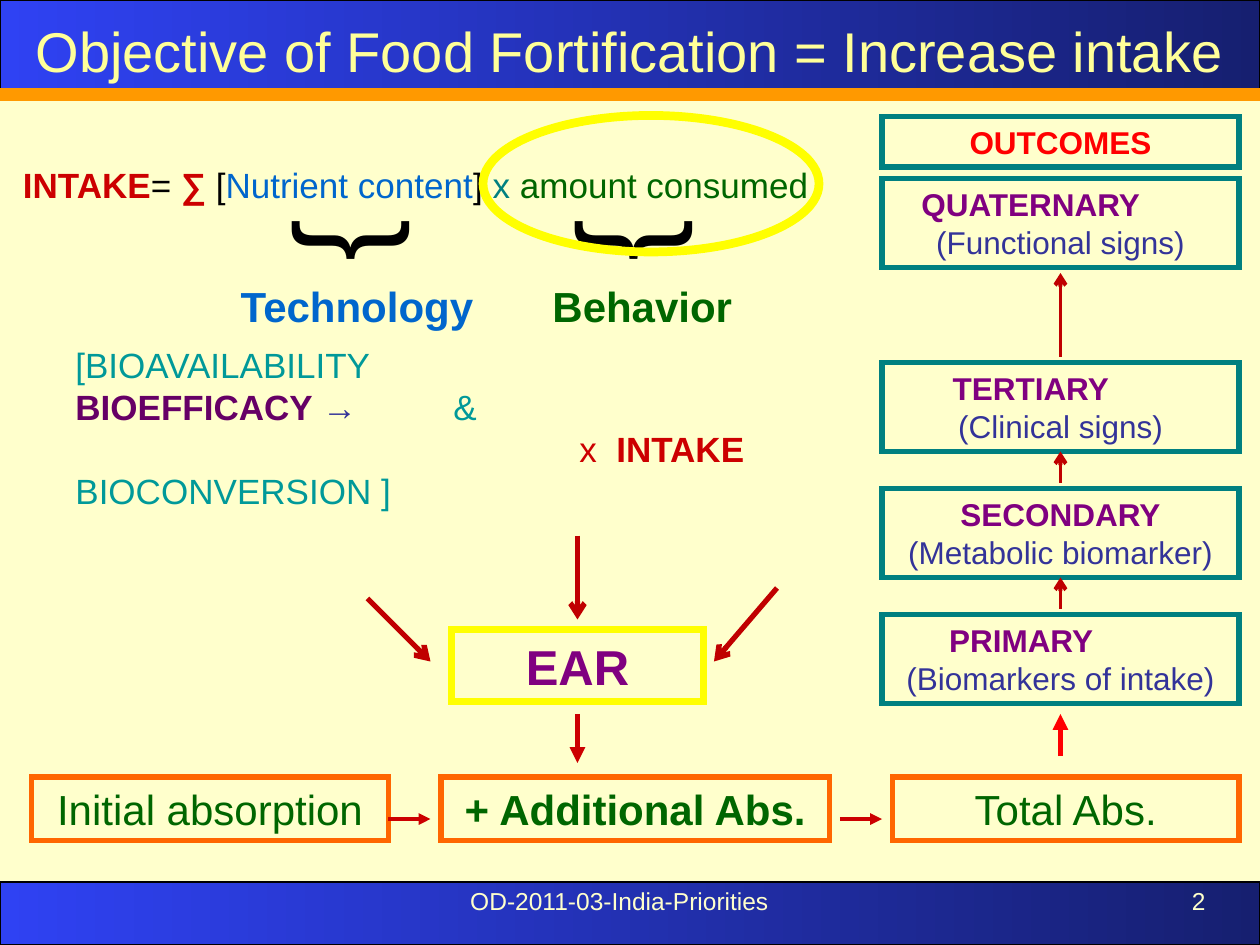
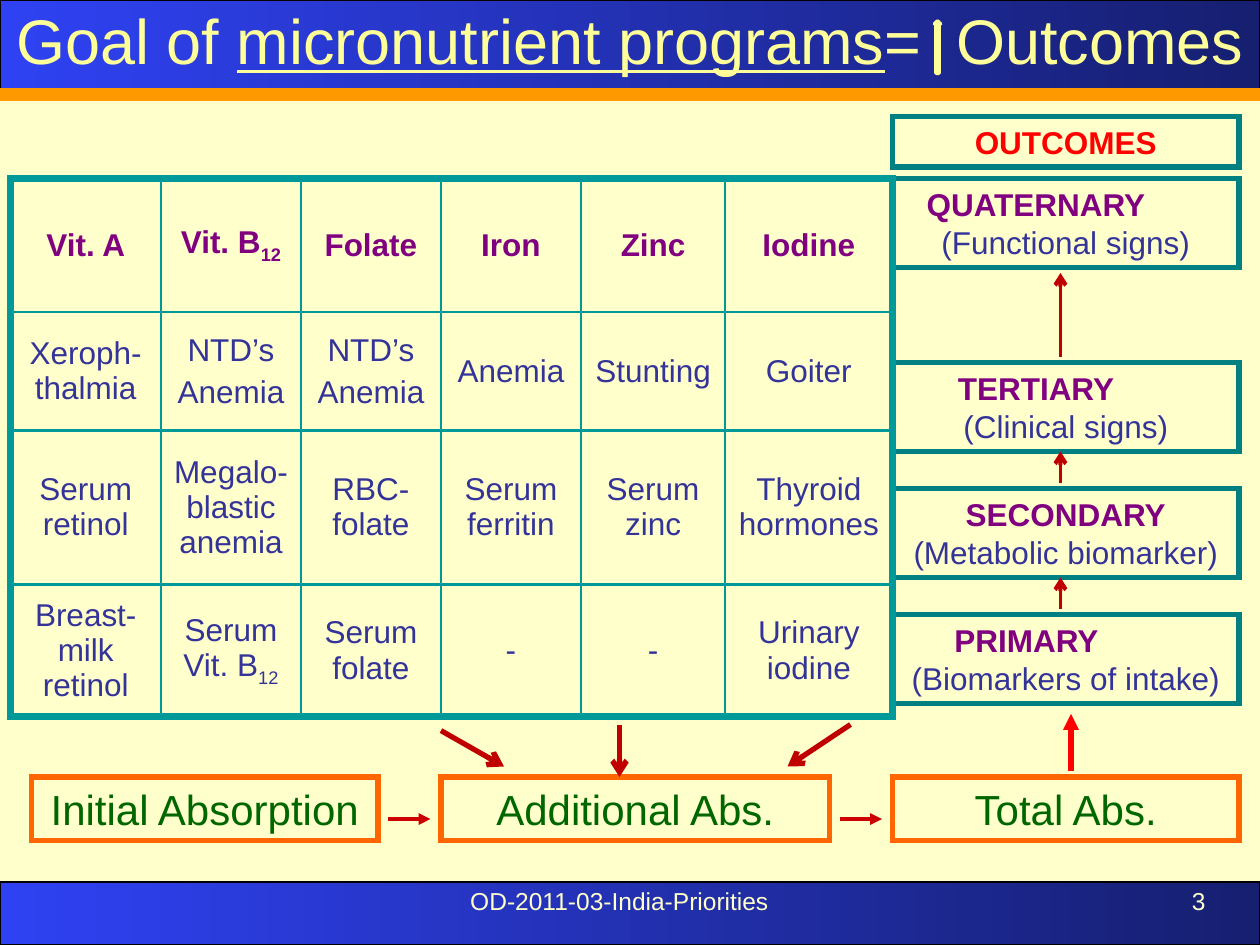
from lxml import etree
from pptx import Presentation
from pptx.dml.color import RGBColor
from pptx.enum.shapes import MSO_CONNECTOR, MSO_SHAPE
from pptx.enum.text import MSO_ANCHOR, MSO_AUTO_SIZE, PP_ALIGN
from pptx.oxml.ns import qn
from pptx.util import Pt

LEFT, CENTER, RIGHT = PP_ALIGN.LEFT, PP_ALIGN.CENTER, PP_ALIGN.RIGHT
TOP, MIDDLE = MSO_ANCHOR.TOP, MSO_ANCHOR.MIDDLE
RECT, OVAL, UP_ARROW = MSO_SHAPE.RECTANGLE, MSO_SHAPE.OVAL, MSO_SHAPE.UP_ARROW
STRAIGHT = MSO_CONNECTOR.STRAIGHT

FONT = "Arial"
W, H = 720, 540
CREAM, PALE_YELLOW, YELLOW, ORANGE = "FFFFCC", "FFFF99", "FFFF00", "FF9900"
BAND_START, BAND_END, BLACK = "2F42F3", "161F70", "000000"
RED, CRIMSON, DARK_RED, BOX_ORANGE = "FF0000", "CC0000", "C00000", "FF6600"
TEAL, LIGHT_TEAL, GREEN = "008080", "009999", "006600"
PURPLE, PLUM, INDIGO, BLUE = "800080", "660066", "333399", "0066CC"

FOOTER = "OD-2011-03-India-Priorities"

# name, sign, right margin that shifts the name left, box top
OUTCOMES = [
    ("QUATERNARY", "(Functional signs)", 34, 102),
    ("TERTIARY", "(Clinical signs)", 34, 207),
    ("SECONDARY", "(Metabolic biomarker)", 0, 279),
    ("PRIMARY", "(Biomarkers of intake)", 45, 351),
]
OUTCOME_ARROWS = [(204, 156), (276, 258), (348, 330)]

INTAKE_FORMULA = [
    ("INTAKE", dict(color=CRIMSON, bold=True)), "= ",
    ("∑", dict(color=CRIMSON, bold=True)), " [",
    ("Nutrient content", dict(color=BLUE)), "] ",
    ("x ", dict(color=TEAL)), ("amount consumed", dict(color=GREEN)),
]
BIO_LINES = [
    ["[BIOAVAILABILITY"],
    [("BIOEFFICACY ", dict(color=PLUM, bold=True)), ("→\t", dict(color=INDIGO)), "&"],
    ["BIOCONVERSION ]"],
]
# text, colour, left, width, left of its brace
FACTORS = [
    ("Technology", BLUE, 120, 168, 185),
    ("Behavior", GREEN, 240, 254, 347),
]
EAR_ARROWS = [(330, 306, 330, 354), (210, 342, 246, 378), (444, 336, 408, 378)]
ABSORPTION_ARROWS = [(252, 417.5, 288, 438), (486, 414, 450, 438), (354, 414, 354, 444)]

# "|" parts paragraphs, "_" starts a subscript
NUTRIENTS = [
    ["Vit. A", "Vit. B_12", "Folate", "Iron", "Zinc", "Iodine"],
    ["Xeroph-thalmia", "NTD’s|Anemia", "NTD’s|Anemia", "Anemia", "Stunting", "Goiter"],
    ["Serum retinol", "Megalo-blastic anemia", "RBC-folate", "Serum ferritin",
     "Serum zinc", "Thyroid hormones"],
    ["Breast-milk retinol", "Serum Vit. B_12", "Serum folate", "-", "-", "Urinary iodine"],
]
COL_WIDTHS = [86, 80, 80, 80, 82.5, 95.5]
ROW_HEIGHTS = [76.5, 67.5, 88, 75.5]


def rgb(value):
    return RGBColor.from_string(value)


def write(tf, paras, size=18, color=BLACK, bold=False, align=CENTER, anchor=MIDDLE,
          wrap=True, gaps=(), right=(), tab=None, inset=None):
    """Fill tf; a paragraph is a list of runs, each a string or (string, overrides)."""
    tf.word_wrap, tf.vertical_anchor = wrap, anchor
    tf.auto_size = MSO_AUTO_SIZE.NONE
    if inset is not None:
        tf.margin_left = tf.margin_right = Pt(inset)
    for i, runs in enumerate(paras):
        p = tf.paragraphs[0] if i == 0 else tf.add_paragraph()
        p.alignment = align
        p.space_before = Pt(gaps[i] if gaps else 0)
        if right:  # zero is written too, or the margin carries over
            p._p.get_or_add_pPr().set("marR", str(Pt(right[i])))
        if tab:
            tabs = etree.SubElement(p._p.get_or_add_pPr(), qn("a:tabLst"))
            etree.SubElement(tabs, qn("a:tab"), pos=str(Pt(tab)), algn="l")
        for run in runs:
            text, own = (run, {}) if isinstance(run, str) else run
            r = p.add_run()
            r.text = text
            r.font.name, r.font.size = FONT, Pt(size)
            r.font.bold = own.get("bold", bold)
            r.font.underline = own.get("underline")
            r.font.color.rgb = rgb(own.get("color", color))
            for name in ("spc", "baseline"):
                if name in own:
                    r._r.get_or_add_rPr().set(name, str(own[name]))


def label(s, paras, x, y, w, h, rotation=0, **fmt):
    sp = s.shapes.add_textbox(Pt(x), Pt(y), Pt(w), Pt(h))
    sp.rotation = rotation
    write(sp.text_frame, paras, **fmt)


def shape(s, kind, x, y, w, h, line, width, fill=None):
    sp = s.shapes.add_shape(kind, Pt(x), Pt(y), Pt(w), Pt(h))
    sp.shadow.inherit = False
    if fill:
        sp.fill.solid()
        sp.fill.fore_color.rgb = rgb(fill)
    else:
        sp.fill.background()
    sp.line.color.rgb = rgb(line)
    sp.line.width = Pt(width)
    return sp


def box(s, paras, x, y, w, h, line, width=3, **fmt):
    sp = shape(s, RECT, x, y, w, h, line, width)
    etree.SubElement(sp.line._get_or_add_ln(), qn("a:miter"), lim="800000")
    write(sp.text_frame, paras, **fmt)


def line(s, x1, y1, x2, y2, color, width, head=None):
    c = s.shapes.add_connector(STRAIGHT, Pt(x1), Pt(y1), Pt(x2), Pt(y2))
    c.line.color.rgb = rgb(color)
    c.line.width = Pt(width)
    if head:
        etree.SubElement(c.line._get_or_add_ln(), qn("a:tailEnd"), type=head)
    etree.SubElement(c._element.spPr, qn("a:effectLst"))


def band(s, y, h):
    sp = shape(s, RECT, 0, y, W, h, BLACK, 0.75)
    sp.fill.gradient()
    sp.fill.gradient_angle = 0
    for stop, color in zip(sp.fill.gradient_stops, (BAND_START, BAND_END)):
        stop.color.rgb = rgb(color)


def new_slide(prs, number, title, size, title_top):
    s = prs.slides.add_slide(prs.slide_layouts[5])
    band(s, 504, 36)
    label(s, [[FOOTER]], 222, 502.5, 264, 37, size=14, color=CREAM, anchor=TOP)
    label(s, [[str(number)]], 528, 502.5, 168, 37, size=14, color=CREAM,
          align=RIGHT, anchor=TOP)
    band(s, 0, 54)
    line(s, 0, 54, W, 54, ORANGE, 8)
    t = s.shapes.title
    t.left, t.top, t.width, t.height = Pt(0), Pt(title_top), Pt(W), Pt(45)
    write(t.text_frame, [title], size=size, color=PALE_YELLOW, inset=0)
    s.shapes._spTree.append(t._element)  # in front of the band
    return s


def outcome_column(s, x):
    w = 708 - x
    for name, sign, margin, y in OUTCOMES:
        box(s, [[(name, dict(color=PURPLE, bold=True))], [sign]], x, y, w, 51, TEAL,
            color=INDIGO, right=(margin, 0), inset=4)
    for start, end in OUTCOME_ARROWS:
        line(s, 606, start, 606, end, DARK_RED, 2.25, "arrow")
    box(s, [["OUTCOMES"]], x, 66.5, w, 29, TEAL, color=RED, bold=True)


def absorption_row(s, initial, initial_width, additional, bold, total_x, total_from):
    for text, x, w, strong in ((initial, 18, initial_width, False),
                               (additional, 252, 222, bold),
                               ("Total Abs.", 510, 198, False)):
        box(s, [[text]], x, 444, w, 36.5, BOX_ORANGE, size=24, color=GREEN,
            bold=strong, inset=4)
    for x in (222, 480):
        line(s, x, 468, x + 24, 468, CRIMSON, 2.25, "triangle")
    line(s, total_x, total_from, total_x, 408, RED, 3, "triangle")


def cell_borders(cell, edges):
    """Draw the four borders; edges tells which of them lie on the table's rim."""
    tcPr = cell._tc.get_or_add_tcPr()
    for side in "LRTB":
        ln = etree.SubElement(tcPr, qn("a:ln" + side),
                              w=str(Pt(4.5 if edges[side] else 1.5)))
        fill = etree.SubElement(ln, qn("a:solidFill"))
        etree.SubElement(fill, qn("a:srgbClr"), val=LIGHT_TEAL)


def cell_runs(text):
    base, _, sub = text.partition("_")
    return [base, (sub, dict(baseline=-25000))] if sub else [base]


def nutrient_table(s):
    rows, cols = len(ROW_HEIGHTS), len(COL_WIDTHS)
    table = s.shapes.add_table(rows, cols, Pt(6), Pt(102), Pt(sum(COL_WIDTHS)),
                               Pt(sum(ROW_HEIGHTS))).table
    table.first_row = table.horz_banding = False
    for column, width in zip(table.columns, COL_WIDTHS):
        column.width = Pt(width)
    for i, height in enumerate(ROW_HEIGHTS):
        table.rows[i].height = Pt(height)
        for j, text in enumerate(NUTRIENTS[i]):
            cell = table.cell(i, j)
            paras = [cell_runs(part) for part in text.split("|")]
            write(cell.text_frame, paras, color=INDIGO if i else PURPLE,
                  bold=i == 0, gaps=(0, 3.6))
            cell.vertical_anchor = MIDDLE
            cell.margin_left = cell.margin_right = Pt(5)
            cell_borders(cell, dict(L=j == 0, R=j == cols - 1, T=i == 0, B=i == rows - 1))
            cell.fill.background()


def intake_slide(prs):
    s = new_slide(prs, 2, ["Objective of Food Fortification = Increase intake"], 32, 6)
    absorption_row(s, "Initial absorption", 204, "+ Additional Abs.", True, 606, 432)
    label(s, [INTAKE_FORMULA], 6, 90, 464, 31, size=20, align=LEFT, wrap=False)
    for text, color, x, w, brace_x in FACTORS:
        label(s, [["{"]], brace_x, 61, 54, 137, rotation=270, size=72,
              align=LEFT, anchor=TOP)
        label(s, [[text]], x, 156.5, w, 36, size=24, color=color, bold=True)
    label(s, BIO_LINES, 36, 192.5, 300, 104, size=20, color=LIGHT_TEAL, align=LEFT,
          anchor=TOP, gaps=(0, 0, 24), tab=216)
    label(s, [["x", (" ", dict(spc=556)), ("INTAKE", dict(bold=True))]],
          324, 240.5, 130, 31, size=20, color=CRIMSON, align=LEFT, anchor=TOP)
    box(s, [["EAR"]], 258, 360, 144, 41, YELLOW, 4, size=28, color=PURPLE, bold=True)
    line(s, 330, 408, 330, 436, CRIMSON, 3, "triangle")
    shape(s, OVAL, 276, 66, 192, 78, YELLOW, 5)
    outcome_column(s, 504)
    for ends in EAR_ARROWS:
        line(s, *ends, DARK_RED, 3, "arrow")


def programs_slide(prs):
    title = ["Goal of ", ("micronutrient programs", dict(underline=True)), "=",
             (" ", dict(spc=1000)), "Outcomes"]
    s = new_slide(prs, 3, title, 36, 0)
    outcome_column(s, 510)
    absorption_row(s, "Initial Absorption", 198, "Additional Abs.", False, 612, 440.5)
    nutrient_table(s)
    shape(s, UP_ARROW, 534, 12, 3.5, 30, PALE_YELLOW, 2, fill="BBE0E3")
    for ends in ABSORPTION_ARROWS:
        line(s, *ends, DARK_RED, 3, "arrow")


def main():
    prs = Presentation()
    prs.slide_width, prs.slide_height = Pt(W), Pt(H)
    background = prs.slide_master.background.fill
    background.solid()
    background.fore_color.rgb = rgb(CREAM)
    intake_slide(prs)
    programs_slide(prs)
    prs.save("out.pptx")


if __name__ == "__main__":
    main()
